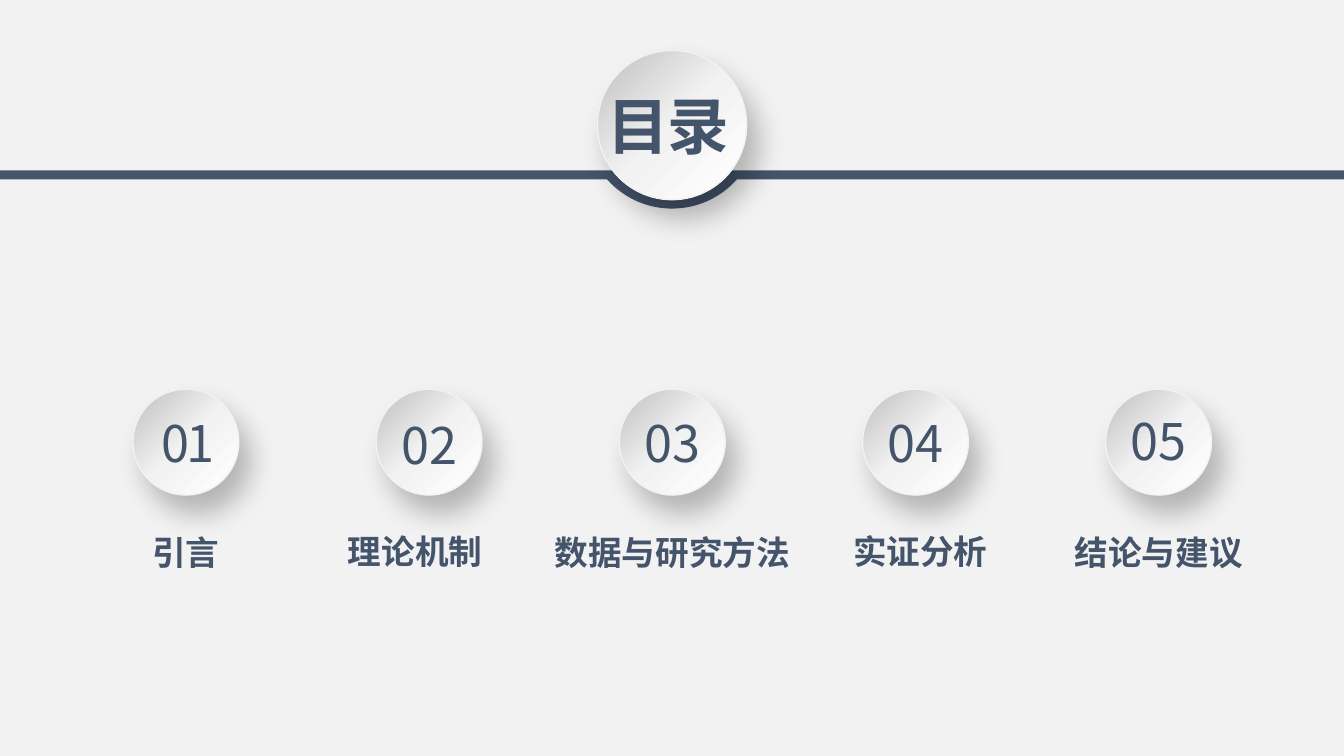
import math

from pptx import Presentation
from pptx.dml.color import RGBColor
from pptx.enum import shapes, text
from pptx.oxml import parse_xml
from pptx.oxml.ns import nsdecls
from pptx.util import Pt

COLORS = {"navy": "44546A", "paper": "F2F2F2", "grey": "BFBFBF", "white": "FFFFFF", "black": "000000"}
FONT = "Noto Sans CJK SC"
CHAPTERS = [
    {"name": "引言", "width": 119.5},
    {"name": "理论机制", "width": 198, "shift": -10, "rise": 0.72, "drop": 1.44},
    {"name": "数据与研究方法", "width": 232.5},
    {"name": "实证分析", "width": 111.6, "shift": 3.5, "rise": 0.72, "wrap": False},
    {"name": "结论与建议", "width": 135.4, "drop": -1.44, "wrap": False},
]


def rgb(name):
    """Return a palette colour."""
    return RGBColor.from_string(COLORS[name])


def write(box, words, size, bold=False, spacing=0, wrap=True):
    """Put one centred line of formatted text in a box."""
    frame = box.text_frame
    frame.word_wrap = wrap
    frame.auto_size = text.MSO_AUTO_SIZE.SHAPE_TO_FIT_TEXT
    frame.vertical_anchor = text.MSO_ANCHOR.TOP
    para = frame.paragraphs[0]
    para.alignment = text.PP_ALIGN.CENTER
    span = para.add_run()
    span.text = words
    span.font.size = Pt(size)
    span.font.bold = bold
    span.font.name = FONT
    span.font.color.rgb = rgb("navy")
    props = span.font._element
    props.append(parse_xml(f'<a:ea {nsdecls("a")} typeface="{FONT}"/>'))
    if spacing:
        props.set("spc", str(int(spacing * 100)))


def add_label(page, words, left, top, width, height, **style):
    """Add a text box with one line."""
    box = page.shapes.add_textbox(Pt(left), Pt(top), Pt(width), Pt(height))
    write(box, words, **style)


def add_button(page, left, top, size):
    """Add a raised round button with a gradient and a soft shadow."""
    button = page.shapes.add_shape(shapes.MSO_SHAPE.OVAL, Pt(left), Pt(top), Pt(size), Pt(size))
    stops = "".join(
        f'<a:gs pos="{place * 1000}"><a:srgbClr val="{COLORS[name]}"/></a:gs>'
        for place, name in [(0, "grey"), (50, "paper"), (100, "white")]
    )
    props = button.element.spPr
    props.append(parse_xml(
        f'<a:gradFill {nsdecls("a")} rotWithShape="1"><a:gsLst>{stops}</a:gsLst>'
        '<a:lin ang="2700000" scaled="0"/></a:gradFill>'
    ))
    button.line.color.rgb = rgb("paper")
    button.line.width = Pt(1)
    props.append(parse_xml(
        f'<a:effectLst {nsdecls("a")}><a:outerShdw blurRad="{Pt(20)}" dist="{Pt(15)}" '
        f'dir="{59 * 60000}" algn="tl" rotWithShape="0"><a:srgbClr val="{COLORS["black"]}">'
        '<a:alpha val="25000"/></a:srgbClr></a:outerShdw></a:effectLst>'
    ))


def add_bar(page, left, top, width, height, centre_y, radius):
    """Add the bar whose lower edge bulges along a circle."""
    right, bottom, centre_x = left + width, top + height, left + width / 2
    start = math.asin((bottom - centre_y) / radius)
    steps = 48
    angles = [start + (math.pi - 2 * start) * step / steps for step in range(steps + 1)]
    arc = [(centre_x + radius * math.cos(a), centre_y + radius * math.sin(a)) for a in angles]
    points = [(right, top), (right, bottom), *arc, (left, bottom)]
    builder = page.shapes.build_freeform(Pt(left), Pt(top))
    builder.add_line_segments([(Pt(x), Pt(y)) for x, y in points], close=True)
    bar = builder.convert_to_shape()
    bar.shadow.inherit = False
    bar.fill.solid()
    bar.fill.fore_color.rgb = rgb("navy")
    bar.line.fill.background()


def add_header(page, left, top, width):
    """Place the bar, the large button and the title."""
    add_bar(page, left, top + 85.7, width, 6.5, centre_y=top + 51, radius=62)
    middle = left + width / 2
    add_button(page, middle - 53.3, top, 106.6)
    title = page.shapes.title
    title.left, title.top = Pt(middle - 61.7), Pt(top + 23)
    title.width, title.height = Pt(118), Pt(60.5)
    write(title, "目录", size=44, bold=True, spacing=-1.5)
    page.shapes.element.append(title.element)


def add_chapter(page, number, chapter, left, top, size):
    """Place one numbered button with its name below."""
    add_button(page, left, top, size)
    middle = left + size / 2
    first = number == 1
    add_label(page, f"{number:02}", middle - 31 + (1.5 if first else 0),
              top + 13 + chapter.get("drop", 0), 62, 51, size=36, spacing=-1.5 if first else 0)
    add_label(page, chapter["name"], middle + chapter.get("shift", 0) - chapter["width"] / 2,
              top + 98.6 - chapter.get("rise", 0), chapter["width"], 36,
              size=24, bold=True, wrap=chapter.get("wrap", True))


def add_chapters(page, left, top, width, size):
    """Spread the chapters evenly across a row."""
    pitch = (width - size) / (len(CHAPTERS) - 1)
    for index, chapter in enumerate(CHAPTERS):
        add_chapter(page, index + 1, chapter, left + index * pitch, top, size)


def main():
    """Build and save the contents slide."""
    deck = Presentation()
    deck.slide_width, deck.slide_height = Pt(960), Pt(540)
    page = deck.slides.add_slide(deck.slide_layouts.get_by_name("Title Only"))
    page.background.fill.solid()
    page.background.fill.fore_color.rgb = rgb("paper")
    add_header(page, left=-0.6, top=36, width=961.2)
    add_chapters(page, left=95, top=278, width=770.4, size=75.6)
    deck.save("out.pptx")


if __name__ == "__main__":
    main()
